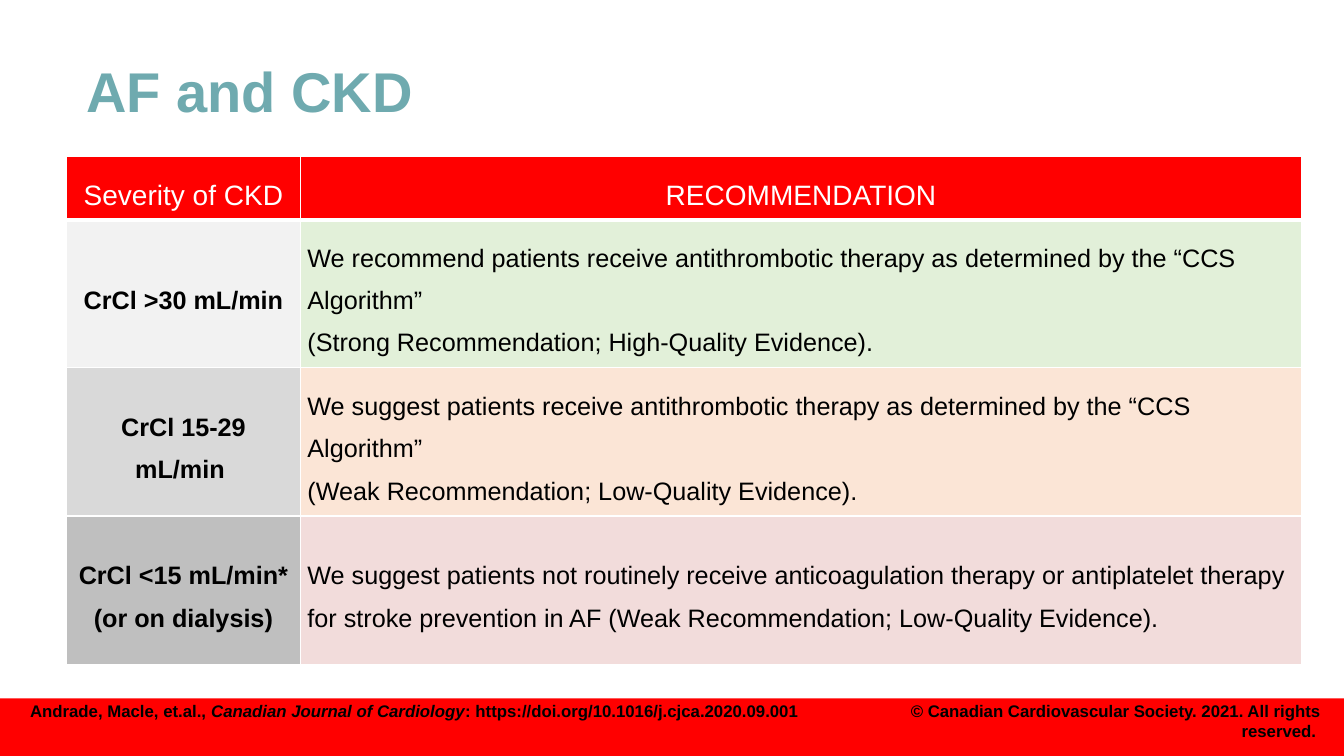
from dataclasses import dataclass
from lxml.etree import SubElement
from pptx import Presentation
from pptx.dml.color import RGBColor as RGB
from pptx.enum.shapes import MSO_SHAPE as Shape
from pptx.enum.text import MSO_ANCHOR as Anchor, PP_ALIGN as Align
from pptx.oxml.ns import qn
from pptx.util import Inches, Pt


@dataclass(frozen=True)
class Theme:
    font: str = "Arial"
    red: str = "FF0000"
    teal: str = "6FAAAF"
    ink: str = "000000"
    white: str = "FFFFFF"
    title: int = 40
    head: int = 20
    body: int = 18
    foot: int = 12


THEME = Theme()

ROWS = [
    (["CrCl >30 mL/min"],
     ["We recommend patients receive antithrombotic therapy as determined by the “CCS Algorithm”",
      "(Strong Recommendation; High-Quality Evidence)."],
     "F2F2F2", "E2F0D9"),
    (["CrCl 15-29 mL/min "],
     ["We suggest patients receive antithrombotic therapy as determined by the “CCS Algorithm”",
      "(Weak Recommendation; Low-Quality Evidence)."],
     "D9D9D9", "FBE5D6"),
    (["CrCl <15 mL/min*", "(or on dialysis)"],
     ["We suggest patients not routinely receive anticoagulation therapy or antiplatelet therapy "
      "for stroke prevention in AF (Weak Recommendation; Low-Quality Evidence)."],
     "BFBFBF", "F2DCDB"),
]


def style(para, size, color, bold=False, align=Align.LEFT, space=1.0):
    para.alignment = align
    para.line_spacing = space
    font = para.font
    font.name = THEME.font
    font.size = Pt(size)
    font.bold = bold
    font.color.rgb = RGB.from_string(color)


def add_bar(slide, box, color):
    bar = slide.shapes.add_shape(Shape.RECTANGLE, *map(Inches, box))
    bar.shadow.inherit = False
    bar.fill.solid()
    bar.fill.fore_color.rgb = RGB.from_string(color)
    bar.line.fill.background()


def add_text(slide, box, parts, size, color, anchor=Anchor.TOP, **look):
    frame = slide.shapes.add_textbox(*map(Inches, box)).text_frame
    frame.word_wrap = True
    frame.vertical_anchor = anchor
    para = frame.paragraphs[0]
    for text, slant in parts:
        run = para.add_run()
        run.text = text
        if slant:
            run.font.italic = True
    style(para, size, color, bold=True, **look)
    return para


def add_glow(para):
    for run in para.runs:
        effects = SubElement(run.font._element, qn("a:effectLst"))
        shade = SubElement(effects, qn("a:outerShdw"), blurRad="38100", dist="12700", dir="2700000")
        SubElement(shade, qn("a:srgbClr"), val=THEME.white)


def set_edges(cell, base):
    props = cell._tc.get_or_add_tcPr()
    for side, width in zip("LRTB", (1, 1, 1, base)):
        edge = SubElement(props, qn(f"a:ln{side}"), w=str(Pt(width)))
        fill = SubElement(edge, qn("a:solidFill"))
        SubElement(fill, qn("a:srgbClr"), val=THEME.white)


def fill_cell(cell, lines, fill, size, color, base=1, **look):
    set_edges(cell, base)
    cell.fill.solid()
    cell.fill.fore_color.rgb = RGB.from_string(fill)
    cell.vertical_anchor = Anchor.MIDDLE
    cell.margin_left = cell.margin_right = Inches(0.07)
    cell.margin_top = cell.margin_bottom = 0
    cell.text = "\n".join(lines)
    for para in cell.text_frame.paragraphs:
        style(para, size, color, space=1.5, **look)


def add_grid(slide):
    count = len(ROWS) + 1
    box = map(Inches, (0.66, 1.55, 12.25, 5.05))
    table = slide.shapes.add_table(count, 2, *box).table
    table.first_row = table.horz_banding = False
    for col, width in zip(table.columns, (2.32, 9.93)):
        col.width = Inches(width)
    for row, height in zip(table.rows, [0.63] + [1.47] * len(ROWS)):
        row.height = Inches(height)
    for col, head in enumerate(("Severity of CKD", "RECOMMENDATION")):
        fill_cell(table.cell(0, col), [head], THEME.red, THEME.head, THEME.white,
                  base=3, align=Align.CENTER)
    for row, (stage, advice, gray, tint) in enumerate(ROWS, 1):
        fill_cell(table.cell(row, 0), stage, gray, THEME.body, THEME.ink,
                  bold=True, align=Align.CENTER)
        fill_cell(table.cell(row, 1), advice, tint, THEME.body, THEME.ink)


def add_foot(slide):
    add_bar(slide, (0, 6.93, 13.33, 0.57), THEME.red)
    cite = [("Andrade, Macle, et.al., ", False),
            ("Canadian Journal of Cardiology", True),
            (": https://doi.org/10.1016/j.cjca.2020.09.001", False)]
    rights = [("© Canadian Cardiovascular Society. 2021. All rights reserved. ", False)]
    for left, width, parts, align in ((0.2, 8, cite, Align.LEFT), (8.7, 4.5, rights, Align.RIGHT)):
        add_glow(add_text(slide, (left, 6.9, width, 0.3), parts, THEME.foot, THEME.ink, align=align))


def main():
    deck = Presentation()
    deck.slide_width = Inches(13.33)
    deck.slide_height = Inches(7.5)
    slide = deck.slides.add_slide(deck.slide_layouts[6])
    add_foot(slide)
    add_grid(slide)
    add_text(slide, (0.76, 0.4, 11.81, 1.07), [("AF and CKD", False)], THEME.title, THEME.teal,
             anchor=Anchor.MIDDLE, space=0.9)
    deck.save("out.pptx")


if __name__ == "__main__":
    main()
